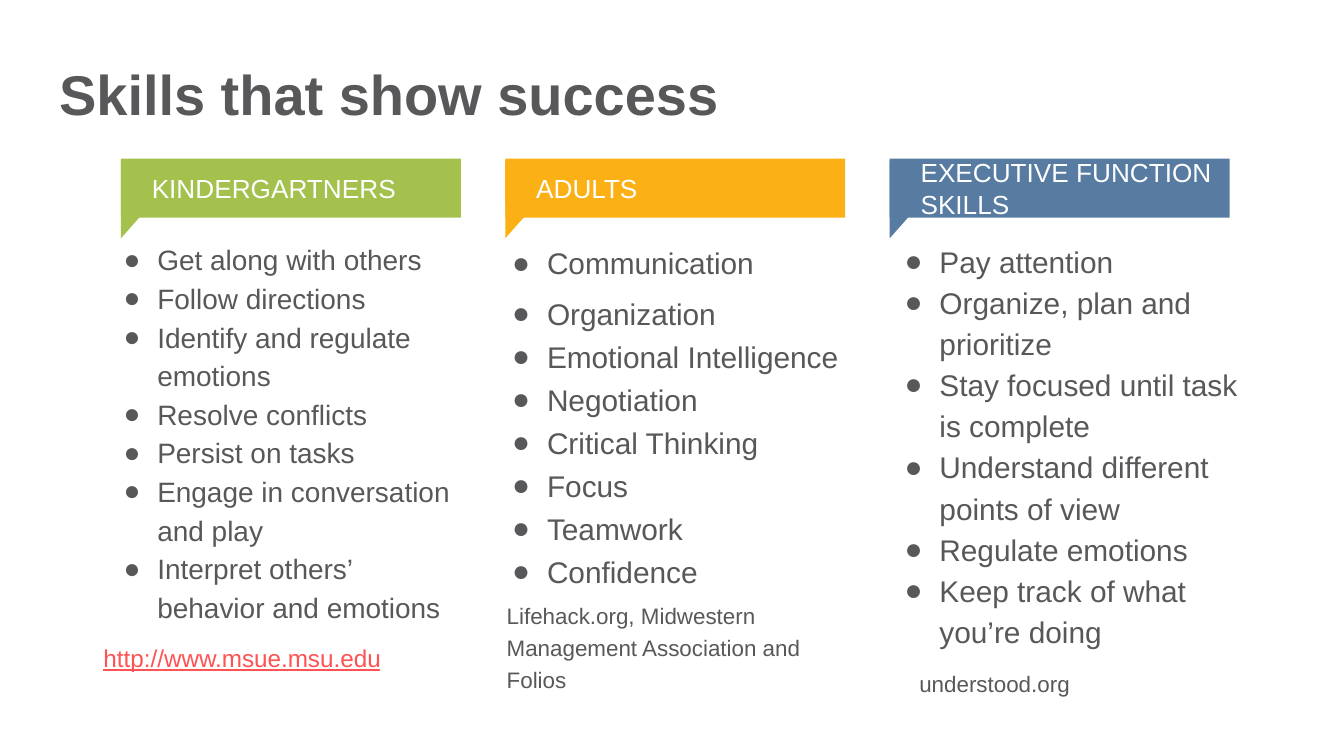
from dataclasses import dataclass
from lxml import etree
from pptx import Presentation
from pptx import util as u
from pptx.dml.color import RGBColor
from pptx.enum import shapes, text
from pptx.oxml import ns


@dataclass(frozen=True)
class Theme:
    face: str = "Arial"
    ink: str = "58585B"
    white: str = "FFFFFF"
    link: str = "FF5252"
    green: str = "A4C14E"
    gold: str = "FBB116"
    blue: str = "577BA1"
    title: int = 30
    head: int = 14
    note: int = 12
    url: int = 13


T = Theme()

COLS = [
    dict(head="KINDERGARTNERS", color=T.green, shift=-0.2, size=15,
         hang=-0.25, lead=1.15, gaps={},
         items=["Get along with others", "Follow directions",
                "Identify and regulate emotions", "Resolve conflicts",
                "Persist on tasks", "Engage in conversation and play",
                "Interpret others’ behavior and emotions"],
         note=dict(words="http://www.msue.msu.edu", size=T.url, color=T.link,
                   line=True, left=0, first=0, lead=1, gap=10)),
    dict(head="ADULTS", color=T.gold, shift=-0.16, size=16,
         hang=-0.26, lead=1.2, gaps={1: 4},
         items=["Communication", "Organization", "Emotional Intelligence",
                "Negotiation", "Critical Thinking", "Focus", "Teamwork",
                "Confidence"],
         note=dict(words="Lifehack.org, Midwestern Management Association and Folios",
                   size=T.note, left=0.1, first=0, lead=1.2, gap=4)),
    dict(head="EXECUTIVE FUNCTION SKILLS", color=T.blue, shift=-0.1, size=16,
         hang=-0.26, lead=1.15, gaps={},
         items=["Pay attention", "Organize, plan and prioritize",
                "Stay focused until task is complete",
                "Understand different points of view", "Regulate emotions",
                "Keep track of what you’re doing"],
         note=dict(words="understood.org", size=T.note, left=0.4,
                   first=-0.15, lead=1.15, gap=9)),
]


def assign(obj, **vals):
    for key, val in vals.items():
        setattr(obj, key, val)


def inch(*nums):
    return [u.Inches(n) for n in nums]


def write(para, words, size, color=T.ink, bold=False, line=False):
    run = para.add_run()
    run.text = words
    assign(run.font, name=T.face, size=u.Pt(size), bold=bold, underline=line)
    run.font.color.rgb = RGBColor.from_string(color)


def frame(shape, left, top, anchor):
    body = shape.text_frame
    side, edge = inch(0.07, top)
    assign(body, word_wrap=True, auto_size=text.MSO_AUTO_SIZE.NONE,
           vertical_anchor=anchor, margin_left=u.Inches(left),
           margin_right=side, margin_top=edge, margin_bottom=edge)
    return body


def indent(para, left, first, mark=None):
    props = para._p.get_or_add_pPr()
    props.set("marL", str(u.Inches(left)))
    props.set("indent", str(u.Inches(first)))
    if mark:
        tint = etree.SubElement(props, ns.qn("a:buClr"))
        etree.SubElement(tint, ns.qn("a:srgbClr"), val=T.ink)
        etree.SubElement(props, ns.qn("a:buFont"), typeface=T.face)
        etree.SubElement(props, ns.qn("a:buChar"), char=mark)
    else:
        etree.SubElement(props, ns.qn("a:buNone"))


def solid(slide, kind, box, color):
    shape = slide.shapes.add_shape(kind, *inch(*box))
    shape.shadow.inherit = False
    shape.fill.solid()
    shape.fill.fore_color.rgb = RGBColor.from_string(color)
    shape.line.fill.background()
    return shape


def banner(slide, x, y, w, h, words, color):
    kind = shapes.MSO_SHAPE
    tail = solid(slide, kind.ISOSCELES_TRIANGLE,
                 (x - 0.11, y + 0.07, 0.41, 0.54), color)
    tail.rotation = 200.7
    bar = solid(slide, kind.RECTANGLE, (x, y, w, h), color)
    para = frame(bar, 0.23, 0.04, text.MSO_ANCHOR.MIDDLE).paragraphs[0]
    para.alignment = text.PP_ALIGN.LEFT
    write(para, words, T.head, T.white)


def skills(slide, x, y, w, h, col):
    box = slide.shapes.add_textbox(*inch(x, y, w, h))
    body = frame(box, 0.07, 0.04, text.MSO_ANCHOR.TOP)
    for i, item in enumerate(col["items"]):
        para = body.paragraphs[0] if i == 0 else body.add_paragraph()
        indent(para, 0.4, col["hang"], "●")
        assign(para, line_spacing=col["lead"],
               space_before=u.Pt(col["gaps"].get(i, 0)))
        write(para, item, col["size"])
    note = dict(col["note"])
    para = body.add_paragraph()
    indent(para, note.pop("left"), note.pop("first"))
    assign(para, line_spacing=note.pop("lead"),
           space_before=u.Pt(note.pop("gap")))
    write(para, **note)


def column(slide, x, y, w, col):
    skills(slide, x + col["shift"], y + 0.55, w + 0.26, 2, col)
    banner(slide, x, y, w, 0.44, col["head"], col["color"])


def heading(slide, x, y, w, h, words):
    title = slide.shapes.title
    left, top, width, height = inch(x, y, w, h)
    assign(title, left=left, top=top, width=width, height=height)
    para = frame(title, 0.1, 0.05, text.MSO_ANCHOR.MIDDLE).paragraphs[0]
    para.alignment = text.PP_ALIGN.LEFT
    write(para, words, T.title, bold=True)


def main():
    deck = Presentation()
    deck.slide_width = u.Inches(10)
    deck.slide_height = u.Inches(10 * 9 / 16)
    slide = deck.slides.add_slide(deck.slide_layouts[5])
    heading(slide, 0.34, 0.38, 9.32, 0.63, "Skills that show success")
    for i, col in enumerate(COLS):
        column(slide, 0.9 + 2.86 * i, 1.18, 2.53, col)
    deck.save("out.pptx")


if __name__ == "__main__":
    main()
